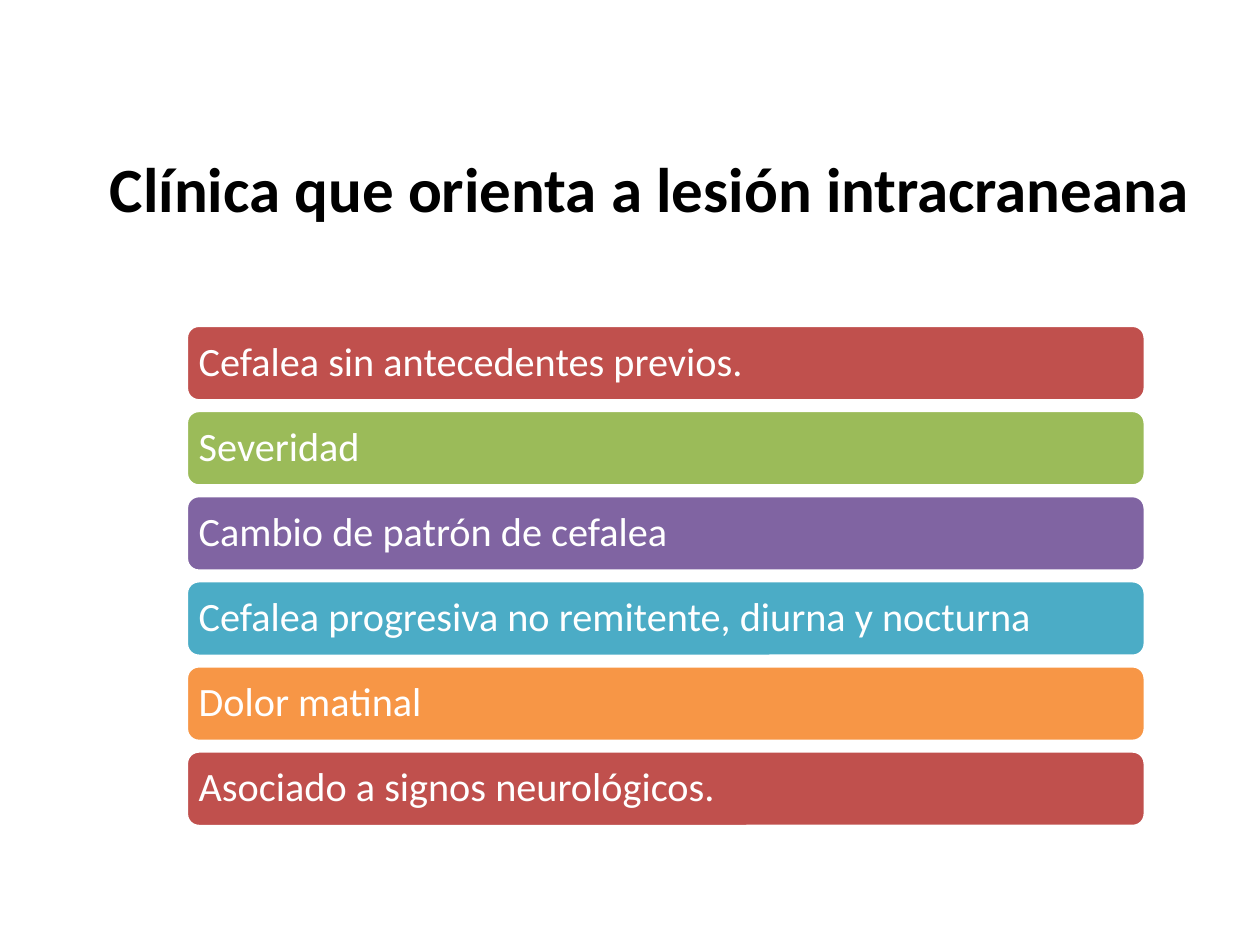
from pptx import Presentation
from pptx.dml.color import RGBColor
from pptx.enum.shapes import MSO_SHAPE
from pptx.enum.text import MSO_ANCHOR, PP_ALIGN
from pptx.util import Pt

RED, GREEN, PURPLE, TEAL, ORANGE = "C0504D", "9BBB59", "8064A2", "4BACC6", "F79646"
SIGNS = [
    ("Cefalea sin antecedentes previos.", RED),
    ("Severidad", GREEN),
    ("Cambio de patrón de cefalea", PURPLE),
    ("Cefalea progresiva no remitente, diurna y nocturna", TEAL),
    ("Dolor matinal", ORANGE),
    ("Asociado a signos neurológicos.", RED),
]
BAR_LEFT, BAR_TOP, BAR_WIDTH, BAR_HEIGHT = 106.5, 185.9, 548, 43.2
BAR_PITCH = 48.65


def color(value):
    """Turn a hex string into a colour."""
    return RGBColor.from_string(value)


def write(tf, text, size, fill, bold=False, align=PP_ALIGN.LEFT, spacing=1.0):
    """Write one formatted paragraph, vertically centred, into a text frame."""
    tf.word_wrap = True
    tf.vertical_anchor = MSO_ANCHOR.MIDDLE
    p = tf.paragraphs[0]
    p.alignment = align
    p.line_spacing = spacing
    r = p.add_run()
    r.text = text
    r.font.name = "Calibri"
    r.font.size = Pt(size)
    r.font.bold = bold
    r.font.color.rgb = color(fill)


def add_title(s, text):
    """Place and fill the title placeholder."""
    sp = s.shapes.title
    sp.left, sp.top, sp.width, sp.height = Pt(22.5), Pt(62), Pt(697.5), Pt(90)
    write(sp.text_frame, text, 36, "000000", bold=True, align=PP_ALIGN.CENTER)


def add_bar(s, top, text, fill):
    """Add a rounded bar holding one clinical sign."""
    sp = s.shapes.add_shape(MSO_SHAPE.ROUNDED_RECTANGLE, Pt(BAR_LEFT), Pt(top),
                            Pt(BAR_WIDTH), Pt(BAR_HEIGHT))
    sp.shadow.inherit = False
    sp.fill.solid()
    sp.fill.fore_color.rgb = color(fill)
    sp.line.color.rgb = color("FFFFFF")
    sp.line.width = Pt(2)
    tf = sp.text_frame
    tf.margin_left = tf.margin_right = tf.margin_top = tf.margin_bottom = Pt(5)
    write(tf, text, 23, "FFFFFF", spacing=0.9)


def main():
    """Build the slide and save it."""
    prs = Presentation()
    prs.slide_width, prs.slide_height = Pt(720), Pt(540)
    s = prs.slides.add_slide(prs.slide_layouts[5])
    add_title(s, "Clínica que orienta a lesión intracraneana")
    for i, (text, fill) in enumerate(SIGNS):
        add_bar(s, BAR_TOP + i * BAR_PITCH, text, fill)
    prs.save("out.pptx")


if __name__ == "__main__":
    main()
